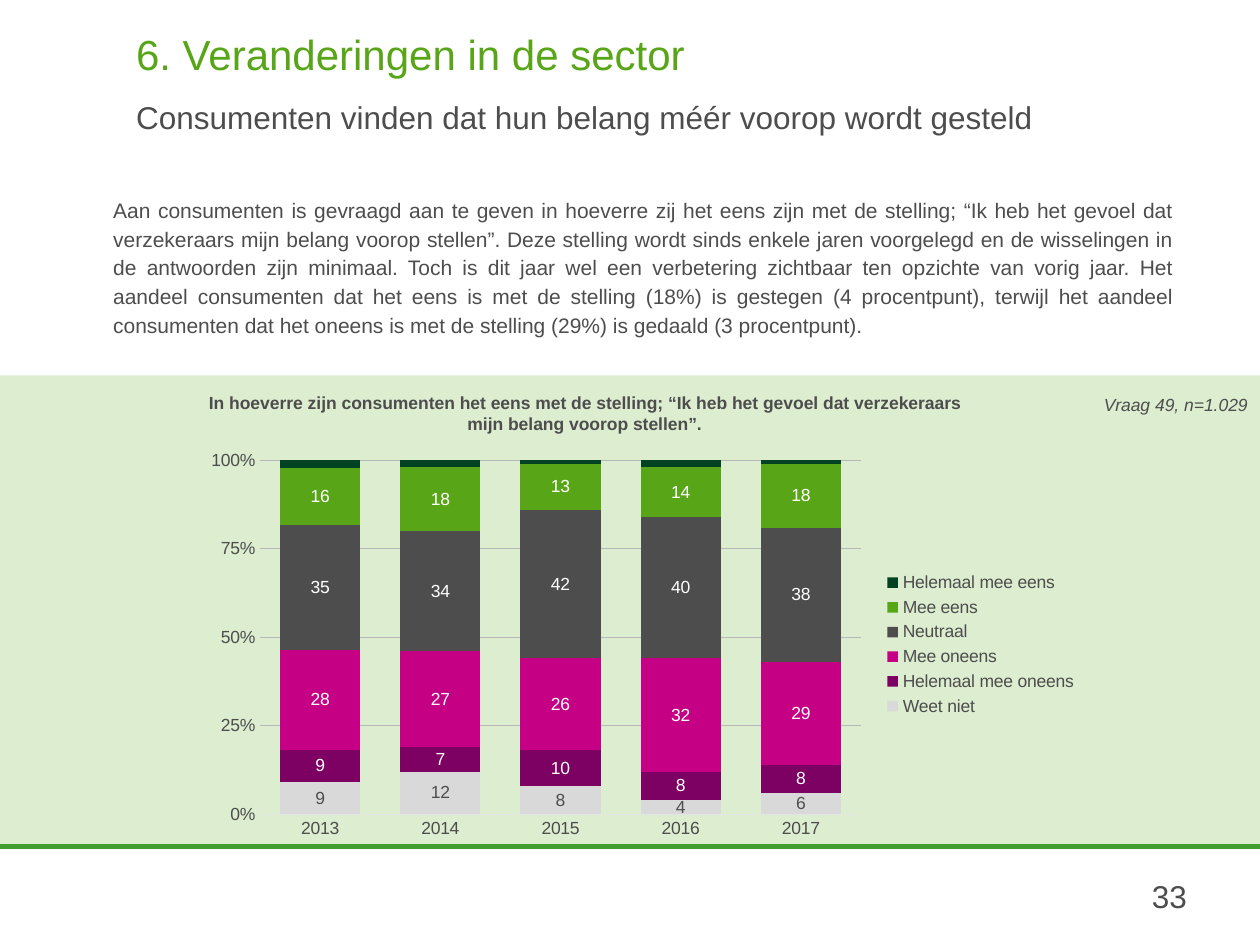
from lxml import etree
from pptx import Presentation
from pptx.chart.data import CategoryChartData
from pptx.dml.color import RGBColor
from pptx.enum.chart import XL_CHART_TYPE, XL_LABEL_POSITION, XL_LEGEND_POSITION, XL_TICK_MARK
from pptx.enum.shapes import MSO_CONNECTOR, MSO_SHAPE
from pptx.enum.text import MSO_ANCHOR, PP_ALIGN
from pptx.oxml import parse_xml
from pptx.oxml.ns import nsdecls, qn
from pptx.util import Inches, Pt

WIDTH, HEIGHT = 10, 7.5
FONT = "Arial"
GREEN, GREY, WHITE = "58A618", "4D4D4D", "FFFFFF"

HEADING = [
    ("6. Veranderingen in de sector", 24, GREEN),
    ("Consumenten vinden dat hun belang méér voorop wordt gesteld", 18, GREY),
]
INTRO = (
    "Aan consumenten is gevraagd aan te geven in hoeverre zij het eens zijn met de stelling; "
    "“Ik heb het gevoel dat verzekeraars mijn belang voorop stellen”. Deze stelling wordt sinds "
    "enkele jaren voorgelegd en de wisselingen in de antwoorden zijn minimaal. Toch is dit jaar "
    "wel een verbetering zichtbaar ten opzichte van vorig jaar. Het aandeel consumenten dat het "
    "eens is met de stelling (18%) is gestegen (4 procentpunt), terwijl het aandeel consumenten "
    "dat het oneens is met de stelling (29%) is gedaald (3 procentpunt)."
)
QUESTION = ("In hoeverre zijn consumenten het eens met de stelling; “Ik heb het gevoel dat "
            "verzekeraars mijn belang voorop stellen”.")
SAMPLE = "Vraag 49, n=1.029"
PAGE = "33"

YEARS = ["2013", "2014", "2015", "2016", "2017"]
# answer, shares per year, bar colour, label colour (None: no labels)
ANSWERS = [
    ("Weet niet", (9, 12, 8, 4, 6), "D9D9D9", GREY),
    ("Helemaal mee oneens", (9, 7, 10, 8, 8), "7D0063", WHITE),
    ("Mee oneens", (28, 27, 26, 32, 29), "C50084", WHITE),
    ("Neutraal", (35, 34, 42, 40, 38), GREY, WHITE),
    ("Mee eens", (16, 18, 13, 14, 18), GREEN, WHITE),
    ("Helemaal mee eens", (2, 2, 1, 2, 1), "004221", None),
]
PLOT_SHARES = {"x": 0.075, "y": 0.045, "w": 0.67, "h": 0.875}


def rgb(value):
    return RGBColor.from_string(value)


def style(font, size, color=GREY, bold=False, italic=False):
    font.name, font.size = FONT, Pt(size)
    font.bold, font.italic = bold, italic
    font.color.rgb = rgb(color)


def box(*lengths):
    return [Inches(length) for length in lengths]


def add_text(slide, place, text, size, align, spacing=None, margin=None, wrap=True, **look):
    frame = slide.shapes.add_textbox(*box(*place)).text_frame
    frame.word_wrap = wrap
    if margin is not None:
        frame.margin_left = frame.margin_right = margin
        frame.margin_top = frame.margin_bottom = margin
    frame.text = text
    paragraph = frame.paragraphs[0]
    paragraph.alignment = align
    paragraph.line_spacing = spacing
    style(paragraph.runs[0].font, size, **look)


def add_heading(slide):
    title = slide.shapes.title
    title.left, title.top, title.width, title.height = box(1.08, 0.18, 8.33, 0.9)
    frame = title.text_frame
    frame.margin_left = frame.margin_right = frame.margin_top = frame.margin_bottom = 0
    frame.vertical_anchor = MSO_ANCHOR.BOTTOM
    frame.word_wrap = True
    frame.text = "\v".join(text for text, _, _ in HEADING)
    paragraph = frame.paragraphs[0]
    paragraph.alignment = PP_ALIGN.LEFT
    paragraph.line_spacing = 1.5
    for run, (_, size, color) in zip(paragraph.runs, HEADING):
        style(run.font, size, color)


def add_rule(slide, y):
    rule = slide.shapes.add_connector(MSO_CONNECTOR.STRAIGHT, *box(0, y, WIDTH, y))
    rule.line.color.rgb = rgb("3F9C35")
    rule.line.width = Pt(2.75)
    etree.SubElement(rule._element.spPr, qn("a:effectLst"))


def add_band(slide):
    band = slide.shapes.add_shape(MSO_SHAPE.RECTANGLE, *box(0, 2.98, WIDTH, 3.76))
    band.shadow.inherit = False
    band.line.fill.background()
    band.fill.solid()
    band.fill.fore_color.rgb = rgb(GREEN)
    fill_color = band._element.spPr.find(f".//{qn('a:srgbClr')}")
    etree.SubElement(fill_color, qn("a:alpha"), val="20000")


def fix_plot_area(chart):
    """Place the inner plot area at fixed shares of the chart."""
    plot_area = chart._chartSpace.chart.plotArea
    for layout in plot_area.findall(qn("c:layout")):
        plot_area.remove(layout)
    shares = "".join(f'<c:{key} val="{share}"/>' for key, share in PLOT_SHARES.items())
    plot_area.insert(0, parse_xml(
        f'<c:layout {nsdecls("c")}><c:manualLayout><c:layoutTarget val="inner"/>'
        f'<c:xMode val="edge"/><c:yMode val="edge"/>{shares}</c:manualLayout></c:layout>'))


def add_answer_chart(slide):
    data = CategoryChartData(number_format="0")
    data.categories = YEARS
    for answer, shares, _, _ in ANSWERS:
        data.add_series(answer, shares)
    chart = slide.shapes.add_chart(
        XL_CHART_TYPE.COLUMN_STACKED_100, *box(1.53, 3.51, 7.12, 3.21), data).chart
    style(chart.font, 10)
    chart.has_title = False
    chart.has_legend = True
    chart.legend.position = XL_LEGEND_POSITION.RIGHT
    chart.legend.include_in_layout = False
    style(chart.legend.font, 10)

    plot = chart.plots[0]
    plot.gap_width, plot.overlap = 50, 100
    plot.vary_by_categories = False
    for series, (_, _, color, label_color) in zip(plot.series, ANSWERS):
        series.format.fill.solid()
        series.format.fill.fore_color.rgb = rgb(color)
        if label_color:
            labels = series.data_labels
            labels.show_value = True
            labels.position = XL_LABEL_POSITION.CENTER
            labels.number_format, labels.number_format_is_linked = "0", False
            style(labels.font, 10, label_color)

    years, shares = chart.category_axis, chart.value_axis
    for axis in (years, shares):
        axis.major_tick_mark = axis.minor_tick_mark = XL_TICK_MARK.NONE
        style(axis.tick_labels.font, 10)
    years.format.line.color.rgb = rgb("E4E4E4")
    years.format.line.width = Pt(0.75)
    shares.minimum_scale, shares.maximum_scale, shares.major_unit = 0, 1, 0.25
    shares.format.line.fill.background()
    shares.tick_labels.number_format = "0%"
    shares.tick_labels.number_format_is_linked = False
    shares.major_gridlines.format.line.color.rgb = rgb("B8B8B8")
    shares.major_gridlines.format.line.width = Pt(0.75)
    fix_plot_area(chart)


def main():
    deck = Presentation()
    deck.slide_width, deck.slide_height = box(WIDTH, HEIGHT)
    slide = deck.slides.add_slide(deck.slide_layouts[5])
    add_rule(slide, 6.72)
    add_heading(slide)
    add_text(slide, (8.5, 6.96, 0.92, 0.33), PAGE, 18, PP_ALIGN.RIGHT, margin=0)
    add_band(slide)
    add_text(slide, (8.5, 3.08, 1.5, 0.27), SAMPLE, 10, PP_ALIGN.RIGHT, italic=True)
    add_text(slide, (1.53, 3.06, 6.22, 0.44), QUESTION, 10, PP_ALIGN.CENTER, bold=True)
    add_answer_chart(slide)
    add_text(slide, (0.8, 1.49, 8.62, 1.25), INTRO, 12, PP_ALIGN.JUSTIFY, spacing=1.14)
    deck.save("out.pptx")


if __name__ == "__main__":
    main()
